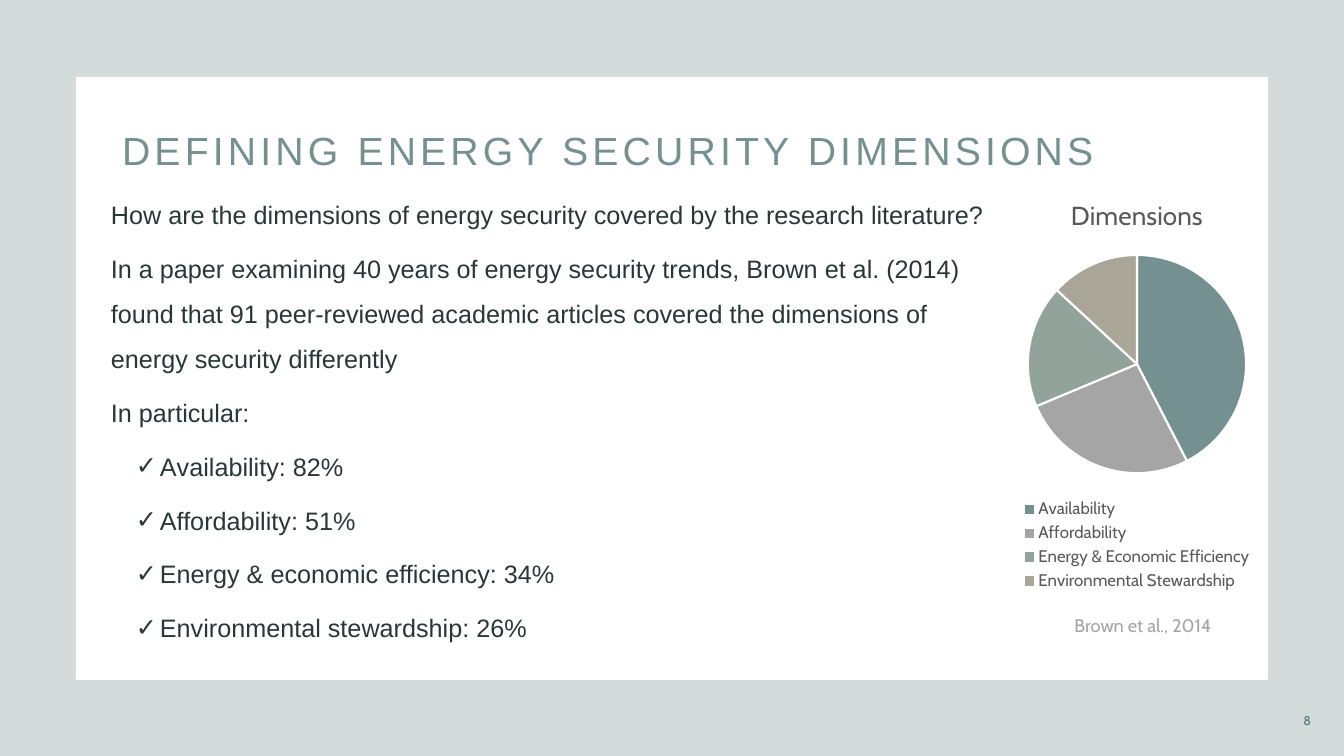
from lxml.etree import SubElement
from pptx import Presentation
from pptx.chart.data import CategoryChartData
from pptx.dml.color import RGBColor
from pptx.enum.chart import XL_CHART_TYPE, XL_LEGEND_POSITION
from pptx.enum.shapes import MSO_SHAPE
from pptx.enum.text import MSO_ANCHOR, MSO_AUTO_SIZE, PP_ALIGN
from pptx.oxml import parse_xml
from pptx.oxml.ns import nsdecls, qn
from pptx.util import Emu, Pt

PX = 914400 / 100.8
COLORS = {
    "frame": "557272", "panel": "FFFFFF", "title": "749090", "body": "293737",
    "chart": "595959", "source": "A5A5A5",
}
SLICES = [
    ("Availability", 42, "749090"),
    ("Affordability", 26, "A5A5A5"),
    ("Energy & Economic Efficiency", 18, "91A39B"),
    ("Environmental Stewardship", 13, "A9A698"),
]
STATEMENTS = [
    "How are the dimensions of energy security covered by the research literature?",
    "In a paper examining 40 years of energy security trends, Brown et al. (2014) "
    "found that 91 peer-reviewed academic articles covered the dimensions of "
    "energy security differently",
    "In particular:",
]
FINDINGS = [
    "Αvailability: 82%",
    "Αffordability: 51%",
    "Εnergy & economic efficiency: 34%",
    "Εnvironmental stewardship: 26%",
]


def px(*lengths):
    return [Emu(round(n * PX)) for n in lengths]


def style(font, size, color, name="Cabin"):
    for key, value in {"size": Pt(size), "name": name, "bold": False}.items():
        setattr(font, key, value)
    font.color.rgb = RGBColor.from_string(COLORS[color])


prs = Presentation()
prs.slide_width, prs.slide_height = px(1344, 756)
slide = prs.slides.add_slide(prs.slide_layouts[5])
shapes = slide.shapes

# Frame and white panel
for color, box in [("frame", (0, 0, 1344, 756)), ("panel", (76, 77, 1192, 603))]:
    sp = shapes.add_shape(MSO_SHAPE.RECTANGLE, *px(*box))
    sp.shadow.inherit = False
    sp.fill.solid()
    sp.fill.fore_color.rgb = RGBColor.from_string(COLORS[color])
    sp.line.fill.background()
    if color == "frame":
        SubElement(sp._element.spPr.find(".//" + qn("a:srgbClr")), qn("a:alpha"), val="25000")

# Title, brought in front of the panel
title = shapes.title
shapes._spTree.append(title._element)
title.left, title.top, title.width, title.height = px(112, 118, 1114, 61)
tf = title.text_frame
tf.text = "DEFINING ENERGY SECURITY DIMENSIONS"
tf.auto_size = MSO_AUTO_SIZE.NONE
tf.vertical_anchor = MSO_ANCHOR.BOTTOM
p = tf.paragraphs[0]
p.alignment, p.line_spacing = PP_ALIGN.LEFT, 0.9
style(p.runs[0].font, 28, "title", "Arial")
p.runs[0].font._element.set("spc", "300")

# Body
tf = shapes.add_textbox(*px(101, 179, 920, 460)).text_frame
tf.word_wrap = True
for i, text in enumerate(STATEMENTS + FINDINGS):
    p = tf.add_paragraph() if i else tf.paragraphs[0]
    p.line_spacing, p.space_after = 1.5, Pt(6)
    r = p.add_run()
    r.text = text
    style(r.font, 18, "body", "Arial")
    if text in FINDINGS:
        pPr = p._p.get_or_add_pPr()
        indent, hanging = px(49, -24)
        pPr.set("marL", str(indent))
        pPr.set("indent", str(hanging))
        SubElement(pPr, qn("a:buFont"), typeface="Arial")
        SubElement(pPr, qn("a:buChar"), char="✓")

# Pie chart
data = CategoryChartData()
data.categories = [name for name, _, _ in SLICES]
data.add_series("Series 1", [value for _, value, _ in SLICES])
chart = shapes.add_chart(XL_CHART_TYPE.PIE, *px(1013, 179, 248, 416), data).chart
style(chart.font, 10, "chart")
chart.has_title = True
chart.chart_title.text_frame.text = "Dimensions"
style(chart.chart_title.text_frame.paragraphs[0].runs[0].font, 18.6, "chart")
chart.chart_title.include_in_layout = False
chart.has_legend = True
chart.legend.position = XL_LEGEND_POSITION.BOTTOM
chart.legend.include_in_layout = False
style(chart.legend.font, 12, "chart")
plot = chart.plots[0]
plot.vary_by_categories = True
for i, (_, _, color) in enumerate(SLICES):
    fmt = plot.series[0].points[i].format
    fmt.fill.solid()
    fmt.fill.fore_color.rgb = RGBColor.from_string(color)
    fmt.line.width = Pt(1.5)
    fmt.line.color.rgb = RGBColor.from_string(COLORS["panel"])
plot_area = chart._chartSpace.chart.plotArea
for old in plot_area.findall(qn("c:layout")):
    plot_area.remove(old)
plot_area.insert(0, parse_xml(
    f'<c:layout {nsdecls("c")}><c:manualLayout><c:layoutTarget val="inner"/>'
    '<c:xMode val="edge"/><c:yMode val="edge"/><c:x val="0.06"/><c:y val="0.18"/>'
    '<c:w val="0.88"/><c:h val="0.53"/></c:manualLayout></c:layout>'))

# Slide number and source
for text, box, size, color, space in [
    ("8", (1226, 701, 95, 40), 9, "frame", 6),
    ("Brown et al., 2014", (1053, 609, 168, 32), 13, "source", 0),
]:
    tf = shapes.add_textbox(*px(*box)).text_frame
    tf.word_wrap = True
    tf.vertical_anchor = MSO_ANCHOR.MIDDLE
    p = tf.paragraphs[0]
    p.alignment, p.space_after = PP_ALIGN.RIGHT, Pt(space)
    r = p.add_run()
    r.text = text
    style(r.font, size, color)

prs.save("out.pptx")
